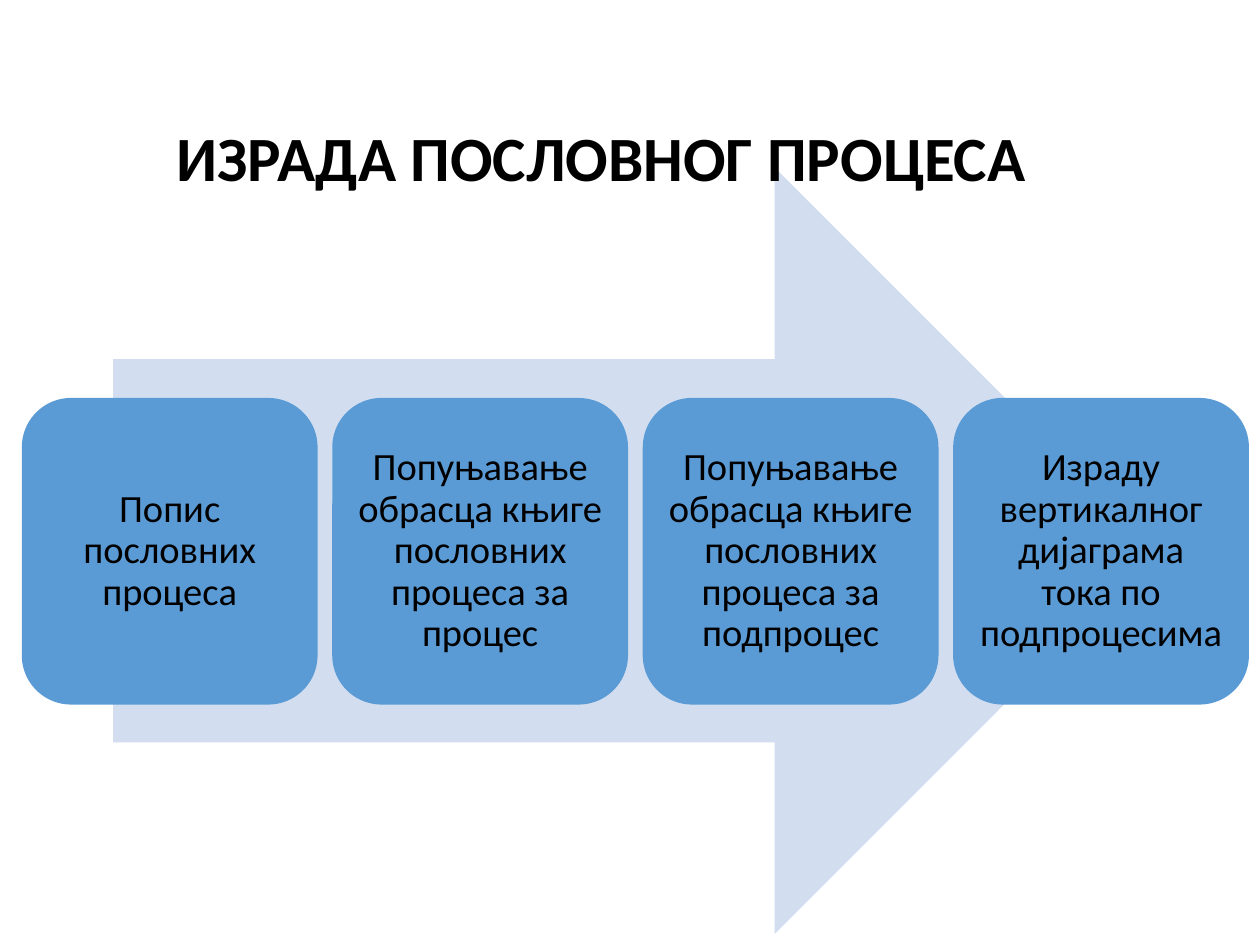
from pptx import Presentation
from pptx.dml.color import RGBColor
from pptx.enum.shapes import MSO_SHAPE
from pptx.enum.text import MSO_ANCHOR, MSO_AUTO_SIZE, PP_ALIGN
from pptx.util import Pt

TITLE = "ИЗРАДА ПОСЛОВНОГ ПРОЦЕСА"
STEPS = [
    "Попис пословних процеса",
    "Попуњавање обрасца књиге пословних процеса за процес",
    "Попуњавање обрасца књиге пословних процеса за подпроцес",
    "Израду вертикалног дијаграма тока по подпроцесима",
]
ARROW = (64.6, 95.8, 597, 437.8)
LEFT, TOP, WIDE, HIGH, GAP = 12.5, 227.4, 169, 175.2, 8.4
INSET = 6.6


def color(code):
    return RGBColor.from_string(code)


def add_form(slide, kind, box, fill):
    form = slide.shapes.add_shape(kind, *map(Pt, box))
    form.shadow.inherit = False
    form.fill.solid()
    form.fill.fore_color.rgb = color(fill)
    form.line.fill.background()
    return form


def set_text(frame, text, size, align, bold=False):
    frame.text = text
    frame.word_wrap = True
    par = frame.paragraphs[0]
    par.alignment = align
    font = par.runs[0].font
    font.name = "Calibri"
    font.size = Pt(size)
    font.bold = bold
    font.color.rgb = color("000000")
    return par


def add_step(slide, num, text):
    box = (LEFT + num * (WIDE + GAP), TOP, WIDE, HIGH)
    step = add_form(slide, MSO_SHAPE.ROUNDED_RECTANGLE, box, "5B9BD5")
    frame = step.text_frame
    frame.margin_left = frame.margin_right = Pt(INSET)
    frame.margin_top = frame.margin_bottom = Pt(INSET)
    frame.vertical_anchor = MSO_ANCHOR.MIDDLE
    par = set_text(frame, text, 22, PP_ALIGN.CENTER)
    par.line_spacing = 0.9


def add_title(slide):
    title = slide.shapes.title
    title.left, title.top = Pt(93.6), Pt(64)
    title.width, title.height = Pt(539.3), Pt(51)
    frame = title.text_frame
    set_text(frame, TITLE, 36, PP_ALIGN.LEFT, True)
    frame.vertical_anchor = MSO_ANCHOR.TOP
    frame.auto_size = MSO_AUTO_SIZE.SHAPE_TO_FIT_TEXT
    # The title lies in front of the arrow tip
    slide.shapes.element.append(title.element)


def main():
    deck = Presentation()
    deck.slide_width, deck.slide_height = Pt(720), Pt(540)
    slide = deck.slides.add_slide(deck.slide_layouts[5])
    add_form(slide, MSO_SHAPE.RIGHT_ARROW, ARROW, "D2DEEF")
    for num, text in enumerate(STEPS):
        add_step(slide, num, text)
    add_title(slide)
    deck.save("out.pptx")


if __name__ == "__main__":
    main()
